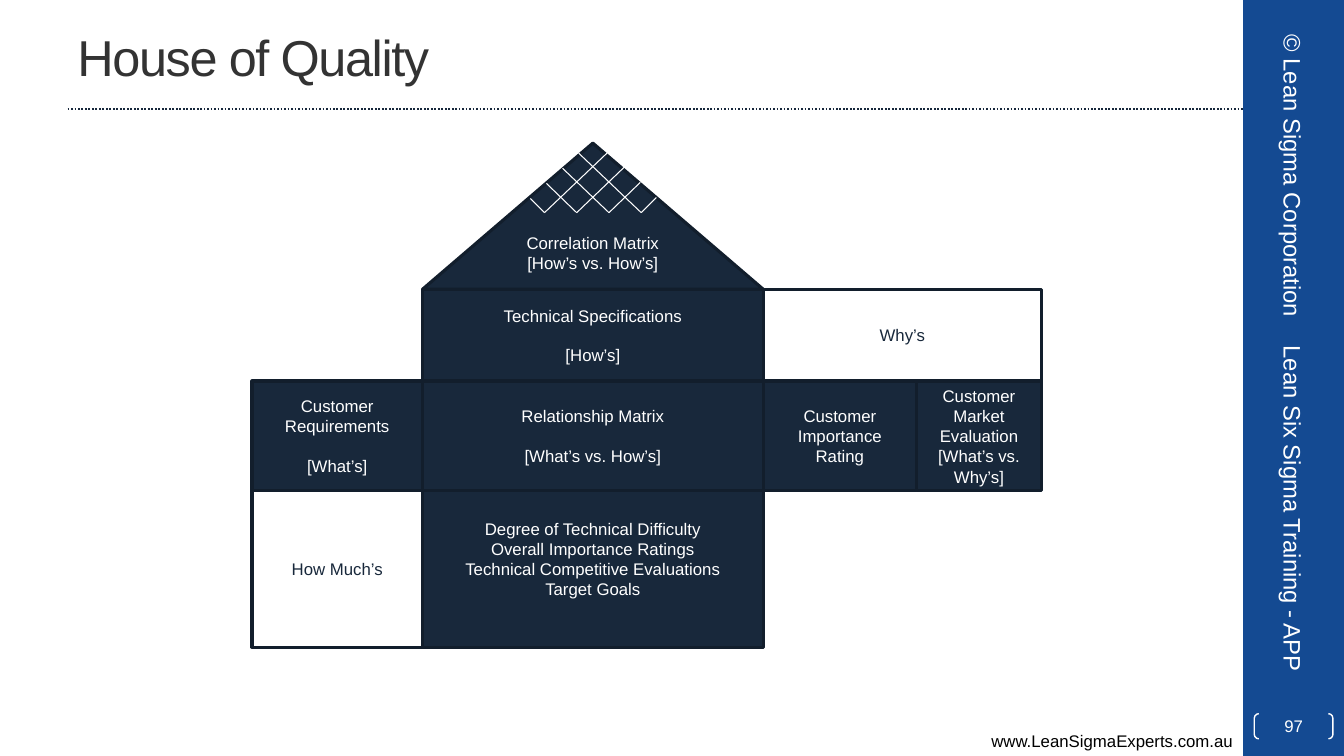
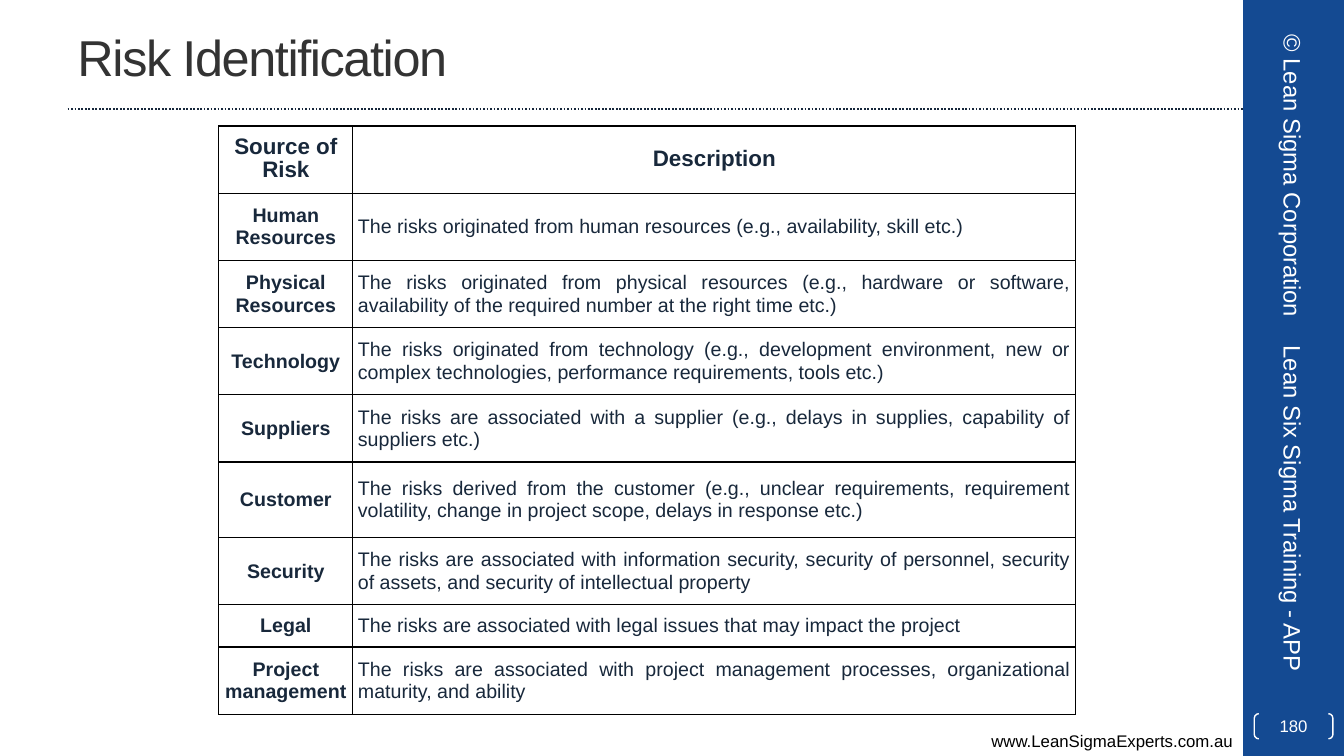
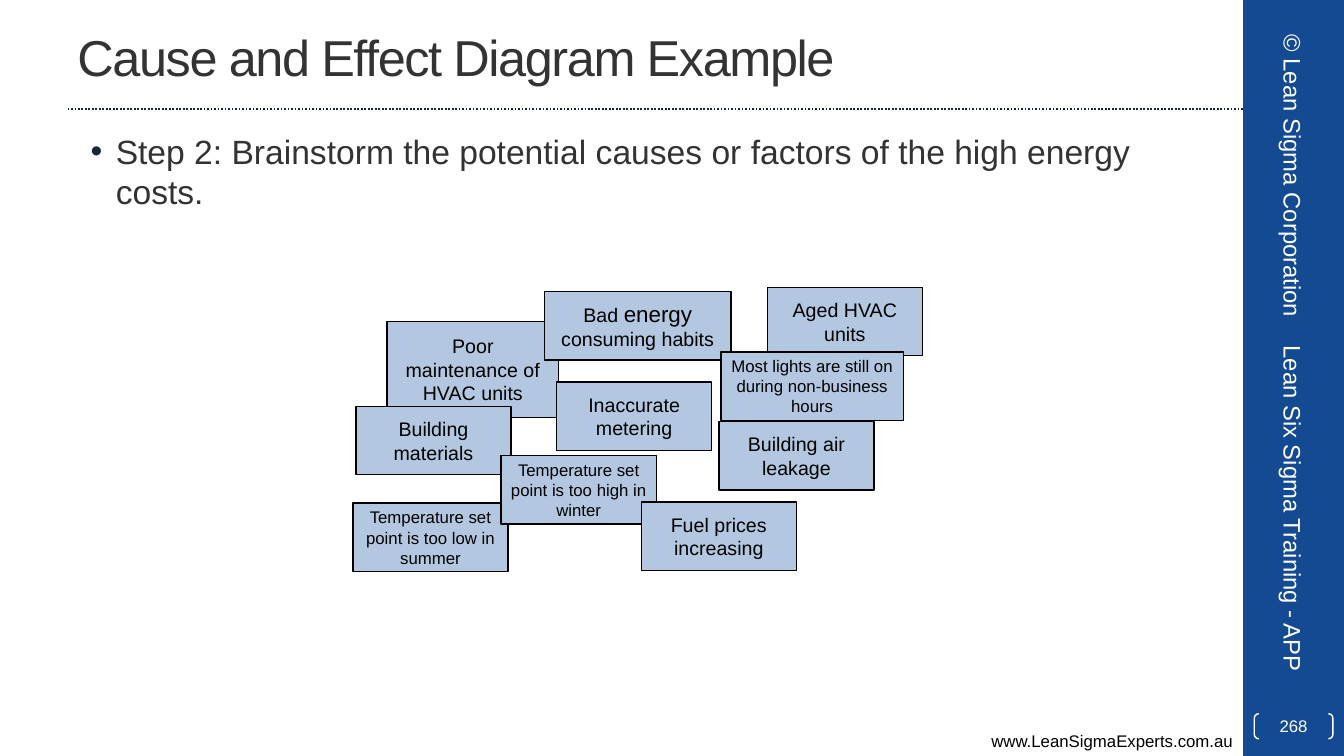
from lxml import etree
from pptx import Presentation
from pptx import util as u
from pptx.dml.color import RGBColor
from pptx.enum import dml, shapes, text
from pptx.oxml import ns

FONT = "Arial"
COLORS = {
    "white": "FFFFFF", "black": "000000", "band": "144A92", "rule": "17273B",
    "title": "333333", "navy": "18283B", "edge": "121E2C", "note": "B3C8E0",
}
LEFT, CENTER, RIGHT, JUSTIFY = (
    text.PP_ALIGN.LEFT, text.PP_ALIGN.CENTER, text.PP_ALIGN.RIGHT, text.PP_ALIGN.JUSTIFY)
TOP, MIDDLE = text.MSO_ANCHOR.TOP, text.MSO_ANCHOR.MIDDLE
RECT = shapes.MSO_SHAPE.RECTANGLE
TRIANGLE = shapes.MSO_SHAPE.ISOSCELES_TRIANGLE
BRACKETS = shapes.MSO_SHAPE.DOUBLE_BRACKET

# Grid lines of the house, and its rooms: text, columns, rows, options
HOUSE_X = [2.5, 4.19, 7.57, 9.09, 10.33]
HOUSE_Y = [1.42, 2.87, 3.78, 4.87, 6.42]
DARK = {"fill": "navy", "color": "white"}
LIGHT = {"fill": "white", "color": "navy"}
SPACED = {**DARK, "gap": 14}
ROOMS = [
    ("Correlation Matrix [How’s vs. How’s]", (1, 2), (0, 1), {**DARK, "kind": TRIANGLE}),
    (["Technical Specifications", "[How’s]"], (1, 2), (1, 2), SPACED),
    (["Relationship Matrix", "[What’s vs. How’s]"], (1, 2), (2, 3), SPACED),
    (["Degree of Technical Difficulty", "Overall Importance Ratings",
      "Technical Competitive Evaluations", "Target Goals"], (1, 2), (3, 4),
     {**DARK, "insets": (0.1, 0.05, 0.1, 0.25)}),
    (["Customer Requirements", "[What’s]"], (0, 1), (2, 3), SPACED),
    ("How Much’s", (0, 1), (3, 4), LIGHT),
    ("Why’s", (2, 4), (1, 2), LIGHT),
    ("Customer Importance Rating", (2, 3), (2, 3), DARK),
    (["Customer Market Evaluation", "[What’s vs. Why’s]"], (3, 4), (2, 3), DARK),
]

RISKS = [
    ("Source of Risk", "Description"),
    ("Human Resources",
     "The risks originated from human resources (e.g., availability, skill etc.)"),
    ("Physical Resources",
     "The risks originated from physical resources (e.g., hardware or software, "
     "availability of the required number at the right time etc.)"),
    ("Technology",
     "The risks originated from technology (e.g., development environment, new or "
     "complex technologies, performance requirements, tools etc.)"),
    ("Suppliers",
     "The risks are associated with a supplier (e.g., delays in supplies, capability "
     "of suppliers etc.)"),
    ("Customer",
     "The risks derived from the customer (e.g., unclear requirements, requirement "
     "volatility, change in project scope, delays in response etc.)"),
    ("Security",
     "The risks are associated with information security, security of personnel, "
     "security of assets, and security of intellectual property"),
    ("Legal", "The risks are associated with legal issues that may impact the project"),
    ("Project management",
     "The risks are associated with project management processes, organizational "
     "maturity, and ability"),
]
RISK_COLS = [1.33, 7.17]
RISK_ROW = 2 / 3
RISK_ROW_EXCEPTIONS = {"Customer": 0.75, "Legal": 0.42}

# Text, left, top, options
NOTE_W, NOTE_H = 1.54, 0.68
CAUSES = [
    ("Aged HVAC units", 7.61, 2.85, {}),
    ("Poor maintenance of HVAC units", 3.84, 3.19, {"w": 1.7, "h": 0.95}),
    ([[("Bad ", 14), ("energy", 16), (" consuming habits", 14)]], 5.4, 2.89, {"w": 1.85}),
    ("Inaccurate metering", 5.52, 3.79, {}),
    ("Building materials", 3.53, 4.03, {}),
    ("Temperature set point is too low in summer", 3.5, 4.99, {"size": 12}),
    ("Temperature set point is too high in winter", 4.97, 4.52, {"size": 12}),
    ("Most lights are still on during non-business hours", 7.15, 3.49,
     {"w": 1.81, "size": 12}),
    ("Building air leakage", 7.13, 4.18, {}),
    ("Fuel prices increasing", 6.36, 4.98, {}),
]


def rgb(name):
    return RGBColor.from_string(COLORS[name])


def add_bullet(p, color, left, hanging):
    pPr = p._p.get_or_add_pPr()
    pPr.set("marL", str(u.Inches(left)))
    pPr.set("indent", str(-u.Inches(hanging)))
    clr = etree.SubElement(pPr, ns.qn("a:buClr"))
    etree.SubElement(clr, ns.qn("a:srgbClr"), val=COLORS[color])
    etree.SubElement(pPr, ns.qn("a:buFont"), typeface=FONT)
    etree.SubElement(pPr, ns.qn("a:buChar"), char="•")


def write(tf, content, size=12, color="black", bold=False, align=LEFT, anchor=MIDDLE,
          gap=0, leading=None, spacing=None, bullet=False, insets=(0.1, 0.05, 0.1, 0.05)):
    """Fill a frame; content is a string or paragraphs, each a string or (text, size) runs."""
    tf.word_wrap = True
    tf.vertical_anchor = anchor
    tf.margin_left, tf.margin_top, tf.margin_right, tf.margin_bottom = map(u.Inches, insets)
    paragraphs = [content] if isinstance(content, str) else content
    for i, runs in enumerate(paragraphs):
        p = tf.add_paragraph() if i else tf.paragraphs[0]
        p.alignment = align
        if bullet:
            add_bullet(p, "navy", 0.38, 0.25)
        if i and gap:
            p.space_before = u.Pt(gap)
        if leading:
            p.line_spacing = u.Pt(leading)
        for words, run_size in [(runs, size)] if isinstance(runs, str) else runs:
            r = p.add_run()
            r.text = words
            r.font.name, r.font.size, r.font.bold = FONT, u.Pt(run_size), bold
            r.font.color.rgb = rgb(color)
            if spacing:
                r._r.get_or_add_rPr().set("spc", str(spacing))


def add_text(slide, content, x, y, w, h, rotation=0, **fmt):
    sp = slide.shapes.add_textbox(*map(u.Inches, (x, y, w, h)))
    sp.rotation = rotation
    write(sp.text_frame, content, **fmt)


def add_box(slide, x, y, w, h, content=None, kind=RECT, fill=None, line=None, width=1, **fmt):
    sp = slide.shapes.add_shape(kind, *map(u.Inches, (x, y, w, h)))
    sp.shadow.inherit = False
    if fill:
        sp.fill.solid()
        sp.fill.fore_color.rgb = rgb(fill)
    else:
        sp.fill.background()
    if line:
        sp.line.color.rgb = rgb(line)
        sp.line.width = u.Pt(width)
    else:
        sp.line.fill.background()
    if content:
        write(sp.text_frame, content, align=CENTER, **fmt)
    return sp


def add_line(slide, x1, y1, x2, y2, color, width, dash=None):
    cx = slide.shapes.add_connector(
        shapes.MSO_CONNECTOR.STRAIGHT, *map(u.Inches, (x1, y1, x2, y2)))
    cx.line.color.rgb = rgb(color)
    cx.line.width = u.Pt(width)
    if dash:
        cx.line.dash_style = dash
    etree.SubElement(cx._element.spPr, ns.qn("a:effectLst"))


def set_borders(cell, color, width):
    tcPr = cell._tc.get_or_add_tcPr()
    for i, side in enumerate(("lnL", "lnR", "lnT", "lnB")):
        ln = etree.Element(ns.qn("a:" + side), w=str(u.Pt(width)))
        fill = etree.SubElement(ln, ns.qn("a:solidFill"))
        etree.SubElement(fill, ns.qn("a:srgbClr"), val=COLORS[color])
        tcPr.insert(i, ln)


def new_slide(prs, title, number):
    """Add a slide with the side band, rule, web address, title and number."""
    slide = prs.slides.add_slide(prs.slide_layouts[6])
    add_box(slide, 12.33, 0, 1, 7.5, fill="band")
    add_line(slide, 0.67, 1.08, 12.33, 1.08, "rule", 1.25, dml.MSO_LINE.ROUND_DOT)
    add_text(slide, "www.LeanSigmaExperts.com.au", 0, 7.2, 12.33, 0.3,
             align=RIGHT, anchor=TOP)
    add_text(slide, title, 0.67, 0.03, 11.11, 1.05, size=36, color="title", spacing=-100)
    brackets = add_box(slide, 12.44, 7.08, 0.78, 0.25, str(number), kind=BRACKETS,
                       line="white", color="white", insets=(0, 0, 0, 0))
    brackets.adjustments[0] = 0.18
    band_text = {"rotation": 90, "size": 17, "color": "white"}
    add_text(slide, "© Lean Sigma Corporation", 11.24, 1.48, 3.17, 0.53,
             align=CENTER, **band_text)
    add_text(slide, "Lean Six Sigma Training - APP", 10.99, 4.9, 3.67, 0.53, **band_text)
    return slide


def add_roof_lattice(slide):
    for i in range(4):
        foot = 5.4 + 0.32 * i
        add_line(slide, foot, 2.11, 6.03 + 0.16 * i, 1.51 + 0.15 * i, "white", 0.75)
        add_line(slide, 5.26 + 0.16 * i, 1.97 - 0.15 * i, foot, 2.11, "white", 0.75)


def build_house(prs):
    slide = new_slide(prs, "House of Quality", 97)
    for content, (c1, c2), (r1, r2), options in ROOMS:
        x, y = HOUSE_X[c1], HOUSE_Y[r1]
        add_box(slide, x, y, HOUSE_X[c2] - x, HOUSE_Y[r2] - y, content,
                line="edge", width=2.25, **options)
    add_roof_lattice(slide)


def build_risks(prs):
    slide = new_slide(prs, "Risk Identification", 180)
    heights = [RISK_ROW_EXCEPTIONS.get(source, RISK_ROW) for source, _ in RISKS]
    frame = slide.shapes.add_table(
        len(RISKS), len(RISK_COLS),
        *map(u.Inches, (2.17, 1.25, sum(RISK_COLS), sum(heights))))
    table = frame.table
    table.first_row = table.horz_banding = False
    for column, width in zip(table.columns, RISK_COLS):
        column.width = u.Inches(width)
    for r, (entries, height) in enumerate(zip(RISKS, heights)):
        table.rows[r].height = u.Inches(height)
        for c, entry in enumerate(entries):
            cell = table.cell(r, c)
            heading = r == 0 or c == 0
            write(cell.text_frame, entry, size=14 if r else 16, color="navy", bold=heading,
                  align=CENTER if heading else JUSTIFY, leading=16)
            cell.vertical_anchor = MIDDLE
            cell.margin_left = cell.margin_right = u.Inches(0.05)
            cell.margin_top = cell.margin_bottom = 0
            cell.fill.background()
            set_borders(cell, "black", 1)


def build_causes(prs):
    slide = new_slide(prs, "Cause and Effect Diagram Example", 268)
    add_text(slide,
             "Step 2: Brainstorm the potential causes or factors of the high energy costs.",
             0.67, 1.25, 11.11, 6, size=24, color="title", anchor=TOP, bullet=True)
    for content, x, y, options in CAUSES:
        style = {"w": NOTE_W, "h": NOTE_H, "size": 14, **options}
        add_box(slide, x, y, content=content, fill="note", line="black", **style)


def main():
    prs = Presentation()
    prs.slide_width, prs.slide_height = u.Inches(13.33), u.Inches(7.5)
    build_house(prs)
    build_risks(prs)
    build_causes(prs)
    prs.save("out.pptx")


if __name__ == "__main__":
    main()
